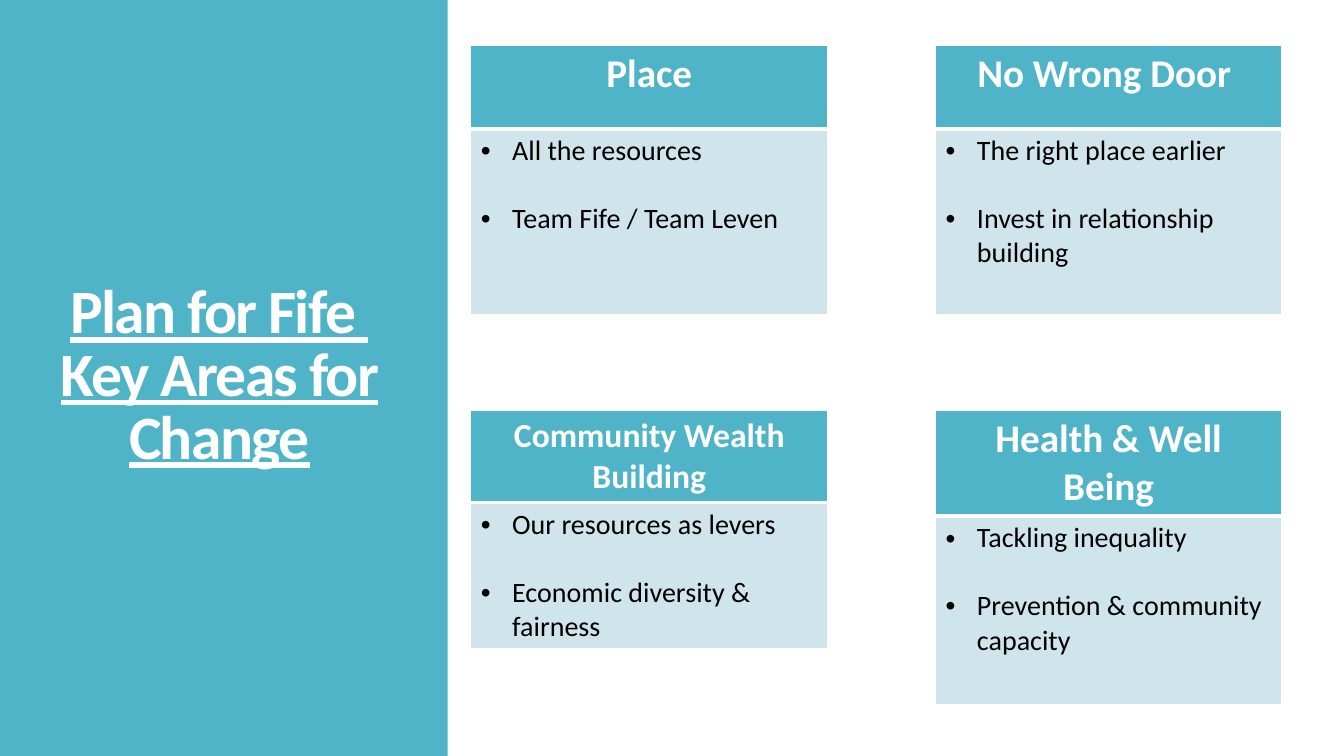
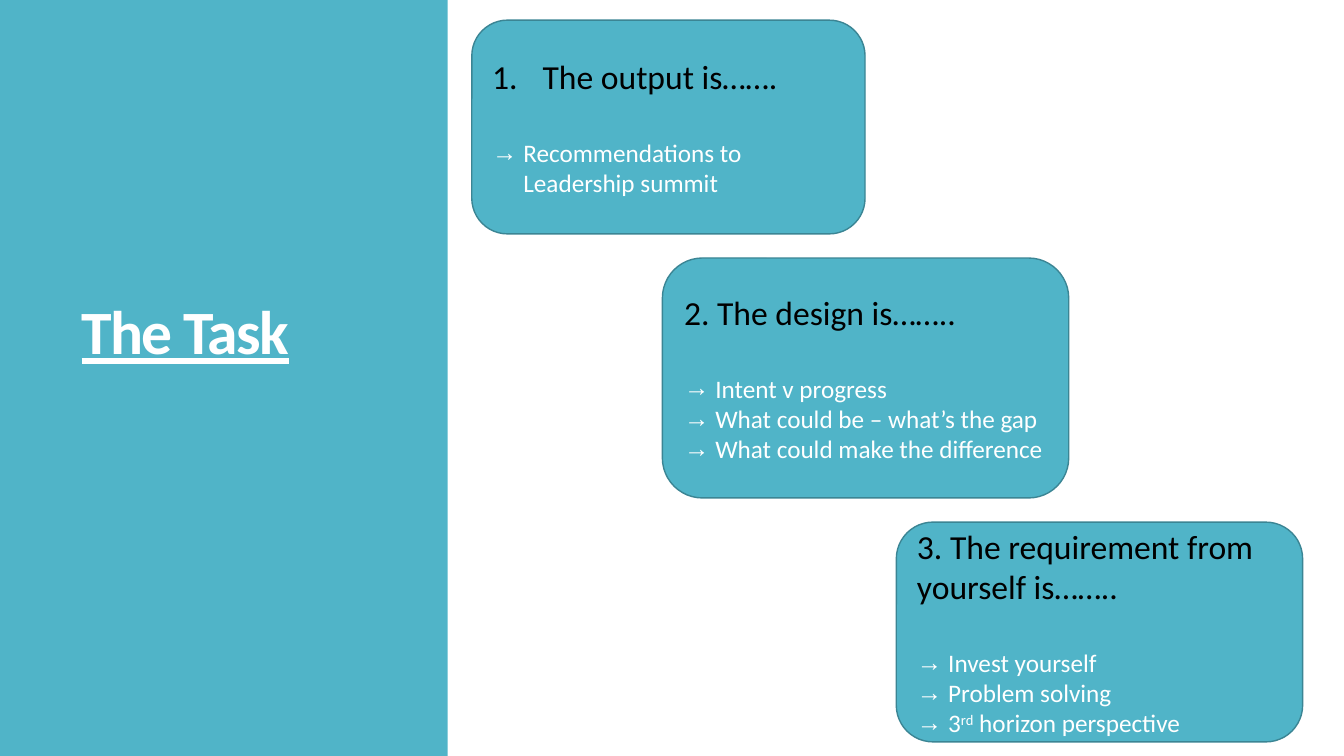
from dataclasses import dataclass

from lxml import etree
from pptx import Presentation
from pptx.dml.color import RGBColor
from pptx.enum.shapes import MSO_SHAPE
from pptx.enum.text import MSO_ANCHOR, MSO_AUTO_SIZE, PP_ALIGN
from pptx.oxml.ns import qn
from pptx.util import Emu, Pt

RECTANGLE = MSO_SHAPE.RECTANGLE
ROUNDED = MSO_SHAPE.ROUNDED_RECTANGLE
LEFT, CENTER = PP_ALIGN.LEFT, PP_ALIGN.CENTER
MIDDLE = MSO_ANCHOR.MIDDLE
NO_FIT = MSO_AUTO_SIZE.NONE

EMU_PER_PX = 9144
PAGE_WIDTH, PAGE_HEIGHT, BAND_WIDTH = 1333, 750, 444
TITLE_ONLY = 5
FONT = "Calibri"
TEAL, PALE, EDGE = "50B4C8", "D0E5EB", "3B8594"
WHITE, BLACK = "FFFFFF", "000000"
HANGING = 31
NUMBER_HANGING = 50
BULLET, ARROW = "•", "→"
COLUMNS = ((467, 354), (928, 343))
ROWS = (45, 407)


@dataclass(frozen=True)
class Area:
    heading: str
    points: tuple[str, ...]
    heights: tuple[int, int]
    size: int = 28


@dataclass(frozen=True)
class Card:
    frame: tuple[int, int, int, int]
    heading: str
    points: tuple[tuple[str, ...], ...]
    numbered: bool = False


AREAS = (
    Area("Place", ("All the resources", "Team Fife / Team Leven"), (83, 184)),
    Area("No Wrong Door ", ("The right place earlier", "Invest in relationship building"), (83, 184)),
    Area("Community Wealth Building", ("Our resources as levers", "Economic diversity & fairness"),
         (90, 143), 24),
    Area("Health & Well Being", ("Tackling inequality", "Prevention & community capacity"), (80, 187)),
)

CARDS = (
    Card((468, 20, 390, 212), "The output is…….",
         (("Recommendations to Leadership summit",),), numbered=True),
    Card((657, 256, 403, 238), "2. The design is……..",
         (("Intent v progress",), ("What could be – what’s the gap",),
          ("What could make the difference",))),
    Card((889, 518, 403, 218), "3. The requirement from yourself is……..",
         (("Invest yourself",), ("Problem solving",), ("3", "rd", " horizon perspective"))),
)


def px(length: int) -> Emu:
    return Emu(length * EMU_PER_PX)


def rgb(color: str) -> RGBColor:
    return RGBColor.from_string(color)


def paint(target, color: str) -> None:
    target.fill.solid()
    target.fill.fore_color.rgb = rgb(color)


def add_text(para, text: str, *, size: int, color: str, bold: bool = False,
             underline: bool = False, spacing: int = 0, baseline: int = 0) -> None:
    span = para.add_run()
    span.text = text
    font = span.font
    font.name, font.size, font.bold, font.underline = FONT, Pt(size), bold, underline
    font.color.rgb = rgb(color)
    properties = span.font._element
    if spacing:
        properties.set("spc", str(spacing))
    if baseline:
        properties.set("baseline", str(baseline))


def add_marker(para, hanging: int, mark: str = "") -> None:
    properties = para._p.get_or_add_pPr()
    properties.set("marL", str(px(hanging)))
    properties.set("indent", str(-px(hanging)))
    if mark:
        etree.SubElement(properties, qn("a:buFont"), typeface="Arial")
        etree.SubElement(properties, qn("a:buChar"), char=mark)
    else:
        etree.SubElement(properties, qn("a:buAutoNum"), type="arabicPeriod")


def next_para(frame, first: bool):
    return frame.paragraphs[0] if first else frame.add_paragraph()


def add_box(page, kind, frame: tuple[int, int, int, int], line: str | None = None):
    box = page.shapes.add_shape(kind, *map(px, frame))
    box.shadow.inherit = False
    paint(box, TEAL)
    if line:
        box.line.color.rgb = rgb(line)
        box.line.width = Pt(1)
    else:
        box.line.fill.background()
    return box


def add_page(deck, lines: tuple[str, ...], frame: tuple[int, int, int, int], align):
    page = deck.slides.add_slide(deck.slide_layouts[TITLE_ONLY])
    band = add_box(page, RECTANGLE, (0, 0, BAND_WIDTH, PAGE_HEIGHT))
    page.shapes._spTree.insert(2, band._element)
    title = page.shapes.title
    title.left, title.top, title.width, title.height = map(px, frame)
    title.text_frame.auto_size = NO_FIT
    title.text_frame.word_wrap = True
    title.text_frame.vertical_anchor = MIDDLE
    para = title.text_frame.paragraphs[0]
    para.alignment = align
    para.line_spacing = 0.85
    for index, line in enumerate(lines):
        if index:
            para.add_line_break()
        add_text(para, line, size=44, color=WHITE, bold=True, underline=True, spacing=-120)
    return page


def style_cell(cell, color: str, top: int, bottom: int) -> None:
    properties = cell._tc.get_or_add_tcPr()
    for side, width in (("L", 1), ("R", 1), ("T", top), ("B", bottom)):
        border = etree.SubElement(properties, qn(f"a:ln{side}"), w=str(Pt(width)))
        solid = etree.SubElement(border, qn("a:solidFill"))
        etree.SubElement(solid, qn("a:srgbClr"), val=WHITE)
    paint(cell, color)


def add_area(page, area: Area, left: int, top: int, width: int) -> None:
    table = page.shapes.add_table(2, 1, px(left), px(top), px(width), px(sum(area.heights))).table
    for row, height in zip(table.rows, area.heights):
        row.height = px(height)
    head, body = table.cell(0, 0), table.cell(1, 0)
    style_cell(head, TEAL, 1, 3)
    style_cell(body, PALE, 3, 1)
    para = head.text_frame.paragraphs[0]
    para.alignment = CENTER
    add_text(para, area.heading, size=area.size, color=WHITE, bold=True)
    for index, point in enumerate(area.points):
        para = next_para(body.text_frame, index == 0)
        para.space_before = Pt(24 if index else 0)
        add_marker(para, HANGING, BULLET)
        add_text(para, point, size=20, color=BLACK)


def add_card(page, card: Card) -> None:
    frame = add_box(page, ROUNDED, card.frame, EDGE).text_frame
    frame.word_wrap = True
    frame.vertical_anchor = MIDDLE
    para = frame.paragraphs[0]
    para.alignment = LEFT
    if card.numbered:
        add_marker(para, NUMBER_HANGING)
    add_text(para, card.heading, size=24, color=BLACK)
    for index, parts in enumerate(card.points):
        para = next_para(frame, False)
        para.alignment = LEFT
        para.space_before = Pt(0 if index else 29)
        add_marker(para, HANGING, ARROW)
        for position, part in enumerate(parts):
            add_text(para, part, size=18, color=WHITE, baseline=30000 * (position % 2))


def main() -> None:
    deck = Presentation()
    deck.slide_width, deck.slide_height = px(PAGE_WIDTH), px(PAGE_HEIGHT)

    page = add_page(deck, ("Plan for Fife ", "Key Areas for Change"), (23, 102, 389, 545), CENTER)
    for index, area in enumerate(AREAS):
        row, column = divmod(index, len(COLUMNS))
        left, width = COLUMNS[column]
        add_area(page, area, left, ROWS[row], width)

    page = add_page(deck, ("The Task",), (71, 61, 327, 545), LEFT)
    for card in CARDS:
        add_card(page, card)

    deck.save("out.pptx")


if __name__ == "__main__":
    main()
